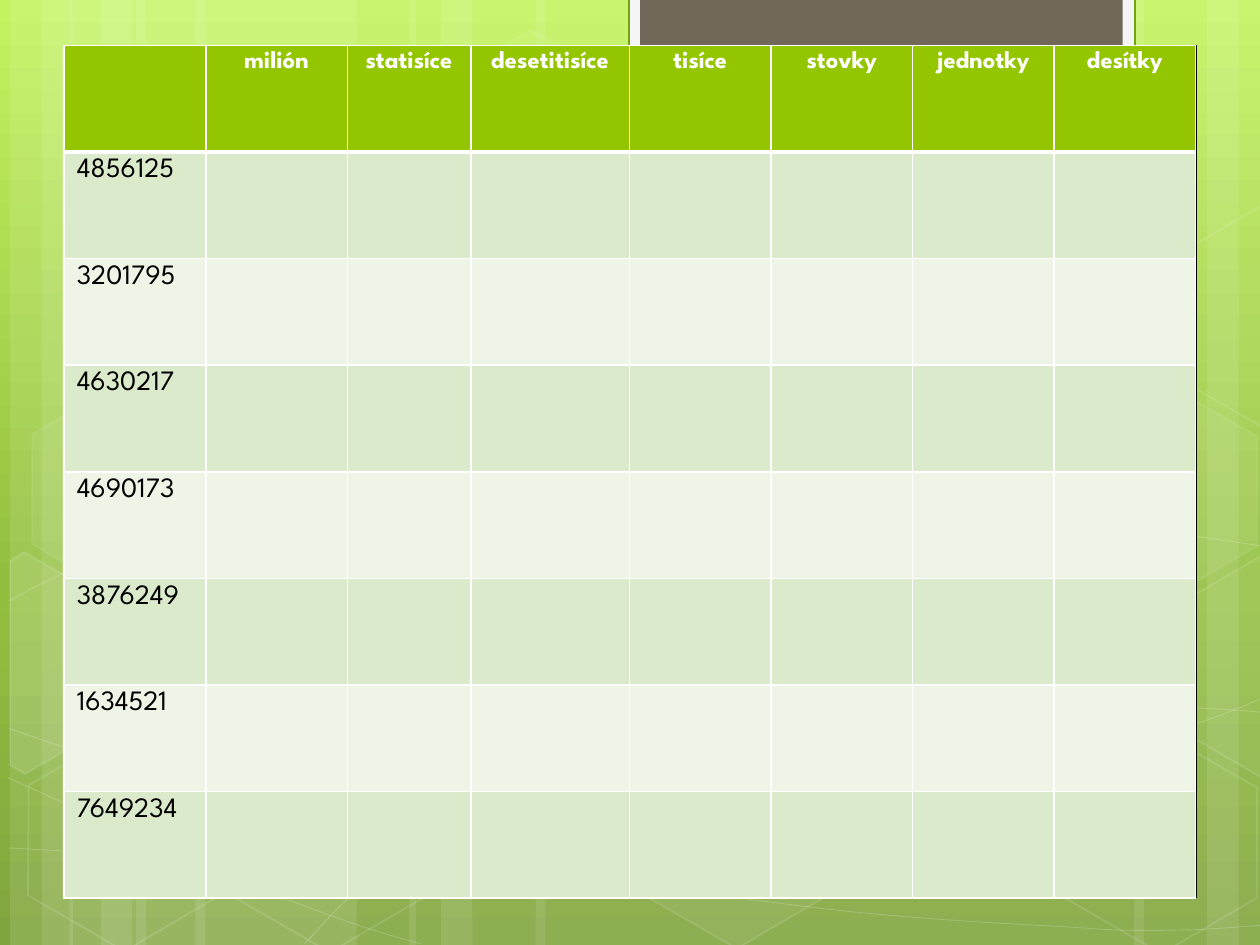
"""Build a place-value worksheet table on a green hexagon background."""
from copy import deepcopy
from math import cos, radians, sin

from lxml import etree
from pptx import Presentation
from pptx.dml.color import RGBColor
from pptx.enum.shapes import MSO_SHAPE
from pptx.enum.text import PP_ALIGN
from pptx.oxml.ns import qn
from pptx.util import Inches, Pt

RECT, HEX = MSO_SHAPE.RECTANGLE, MSO_SHAPE.HEXAGON
CENTER, LEFT = PP_ALIGN.CENTER, PP_ALIGN.LEFT
FONT = "League Spartan"
WIDE, HIGH, TILT = 10, 7.5, 30

HEADS = ["", "milión", "statisíce", "desetitisíce", "tisíce", "stovky", "jednotky", "desítky"]
NUMBERS = ["4856125", "3201795", "4630217", "4690173", "3876249", "1634521", "7649234"]

COLORS = {
    "white": "FFFFFF", "black": "000000", "head": "94C600", "odd": "DCEACC",
    "even": "EEF5E7", "tab": "F5F5F5", "edge": "74A510", "brown": "71685A",
}
SKY = [(0, "C3F35F"), (0.62, "93BF3F"), (1, "81A53E")]

BANDS = [
    (1.08, 1.75, 0), (0.08, 0.5, 0), (0.33, 0.83, 0), (1.55, 1.75, 0), (0.55, 0.5, 0), (0.8, 0.83, 0),
    (7.33, 1.75, 180), (9.58, 0.5, 180), (9, 0.83, 180), (4.25, 3.08, 0), (3.25, 0.5, 0), (3.5, 0.83, 0),
]
CURVES = [
    [(0.07, 6.73), (0.61, 6.76), (1.15, 6.79), (1.9, 6.78), (2.65, 6.77), (3.58, 6.75),
     (4.58, 6.65), (5.58, 6.55), (7, 6.36), (7.92, 6.17), (8.83, 5.98), (9.77, 5.68), (10.07, 5.51)],
    [(0.07, 4.77), (0.36, 4.61), (0.65, 4.46), (1.21, 4.31), (1.78, 4.16), (2.59, 3.94),
     (3.47, 3.87), (4.36, 3.8), (5.44, 3.79), (6.54, 3.87), (7.64, 3.95), (9.47, 4.26), (10.07, 4.34)],
    [(0.06, 6.17), (1.27, 6.72), (2.47, 7.27), (3.34, 7.49)],
    [(0.07, 5.78), (0.38, 5.89), (0.7, 6), (1.28, 6.16), (1.86, 6.31), (2.73, 6.56),
     (3.57, 6.73), (4.4, 6.9), (5.45, 7.08), (6.28, 7.18), (7.11, 7.29), (8, 7.33),
     (8.53, 7.36), (9.05, 7.4), (9.19, 7.38), (9.45, 7.38), (9.71, 7.37), (9.89, 7.35), (10.07, 7.34)],
    [(2.42, 7.49), (2.6, 7.29), (2.78, 7.09), (3.02, 6.91), (3.26, 6.73), (3.6, 6.53),
     (3.88, 6.39), (4.16, 6.25), (4.33, 6.19), (4.7, 6.09), (5.06, 5.99), (5.73, 5.85),
     (6.08, 5.78), (6.44, 5.71), (6.49, 5.71), (6.8, 5.69), (7.11, 5.66), (7.6, 5.63),
     (7.94, 5.62), (8.29, 5.61), (8.86, 5.62), (8.86, 5.62), (8.86, 5.62), (9.53, 5.62),
     (9.53, 5.62), (9.71, 5.63), (9.88, 5.64), (9.97, 5.65), (10.06, 5.66), (10.03, 5.65), (10.06, 5.66)],
]
HEXES = [
    (3.34, 0.36, 4, 8), (4.97, 5.89, 6, 12), (0.11, 5.91, 0, 12), (0.14, 3.12, 7, 8),
    (1.74, 5.92, 0, 12), (7.53, 4.53, 10, 12), (8.34, 5.93, 0, 12), (8.34, 3.14, 7, 8),
]
PARTS = [
    ((0.36, 5.35), [(0.08, 4.45), (0.19, 4.38), (0.96, 4.82), (0.95, 5.7), (0.2, 6.14), (0.08, 6.07)], 10),
    ((9.85, 5.2), [(9.26, 4.85), (10.01, 4.41), (10.09, 4.46), (10.09, 6.13), (10.02, 6.17), (9.26, 5.73)], 4),
    ((9.85, 2.41), [(9.26, 2.07), (10.01, 1.63), (10.1, 1.68), (10.09, 3.35), (10.02, 3.39), (9.26, 2.95)], 0),
]
PANELS = [
    ((0.5, 0.36, 9, 6.76), "white", "black", 0.5),
    ((4.99, -0.02, 4.02, 0.76), "tab", "edge", 0.85),
    ((5.08, -0.02, 3.83, 0.68), "brown", None, 0),
]
GRID = (0.51, 0.36, 8.98, 6.77)
SPECIAL = {2: 0.98, 3: 1.26}


def rgb(name):
    return RGBColor.from_string(COLORS[name])


def fade(shape, query, share):
    for color in shape._element.spPr.xpath(query):
        etree.SubElement(color, qn("a:alpha")).set("val", str(share * 1000))


def paint(shape, fill="white", cover=100, line=None, width=1, ink=100):
    shape.shadow.inherit = False
    if cover:
        shape.fill.solid()
        shape.fill.fore_color.rgb = rgb(fill)
        if cover < 100:
            fade(shape, "./a:solidFill/a:srgbClr", cover)
    else:
        shape.fill.background()
    if line:
        shape.line.color.rgb = rgb(line)
        shape.line.width = Pt(width)
        if ink < 100:
            fade(shape, "./a:ln//a:srgbClr", ink)
    else:
        shape.line.fill.background()


def add(shapes, kind, box):
    return shapes.add_shape(kind, *map(Inches, box))


def trace(shapes, points, close):
    first, *rest = [(Inches(x), Inches(y)) for x, y in points]
    pen = shapes.build_freeform(*first)
    pen.add_line_segments(rest, close=close)
    return pen.convert_to_shape()


def bend(shape, points):
    """Turn each three straight steps into one cubic curve, or one line if flat."""
    steps = shape._element.xpath(".//a:lnTo")
    for i in range(0, len(steps), 3):
        start, near, far, end = points[i:i + 4]
        one, two, three = steps[i:i + 3]
        if near == start and far == end:
            one.getparent().remove(one)
            two.getparent().remove(two)
            continue
        curve = etree.Element(qn("a:cubicBezTo"))
        one.addprevious(curve)
        for step in (one, two, three):
            curve.append(step[0])
            step.getparent().remove(step)


def turn(points, mid, angle):
    c, s = cos(radians(angle)), sin(radians(angle))
    moved = [(x - mid[0], y - mid[1]) for x, y in points]
    return [(mid[0] + x * c - y * s, mid[1] + x * s + y * c) for x, y in moved]


def border(cell, top, bottom):
    props = cell._tc.get_or_add_tcPr()
    for i, (side, width) in enumerate((("L", 1), ("R", 1), ("T", top), ("B", bottom))):
        line = etree.Element(qn("a:ln" + side), w=str(Pt(width)))
        fill = etree.SubElement(line, qn("a:solidFill"))
        etree.SubElement(fill, qn("a:srgbClr")).set("val", COLORS["white"])
        props.insert(i, line)


def fill_sky(slide):
    fill = slide.background.fill
    fill.gradient()
    fill.gradient_angle = 270
    first = slide._element.xpath(".//a:gs")[0]
    first.addnext(deepcopy(first))
    for stop, (place, color) in zip(fill.gradient_stops, SKY):
        stop.position = place
        stop.color.rgb = RGBColor.from_string(color)


def add_grid(shapes):
    rows = [HEADS] + [[number] + [""] * (len(HEADS) - 1) for number in NUMBERS]
    table = shapes.add_table(len(rows), len(HEADS), *map(Inches, GRID)).table
    rest = (GRID[2] - sum(SPECIAL.values())) / (len(HEADS) - len(SPECIAL))
    for i, col in enumerate(table.columns):
        col.width = Inches(SPECIAL.get(i, rest))
    for r, texts in enumerate(rows):
        table.rows[r].height = Inches(GRID[3] / len(rows))
        head = r == 0
        for c, text in enumerate(texts):
            cell = table.cell(r, c)
            cell.fill.solid()
            cell.fill.fore_color.rgb = rgb("head" if head else "odd" if r % 2 else "even")
            border(cell, 3 if r == 1 else 1, 3 if head else 1)
            para = cell.text_frame.paragraphs[0]
            para.text = text
            para.alignment = CENTER if head else LEFT
            for run in para.runs:
                run.font.name = FONT
                run.font.size = Pt(14 if head else 16)
                run.font.bold = head
                run.font.color.rgb = rgb("white" if head else "black")


def main():
    deck = Presentation()
    deck.slide_width, deck.slide_height = Inches(WIDE), Inches(HIGH)
    slide = deck.slides.add_slide(deck.slide_layouts[6])
    shapes = slide.shapes
    fill_sky(slide)
    for left, width, angle in BANDS:
        band = add(shapes, RECT, (left, 0, width, HIGH))
        band.rotation = angle
        paint(band, cover=10)
    for points in CURVES:
        curve = trace(shapes, points, False)
        bend(curve, points)
        paint(curve, cover=0, line="white", width=0.5, ink=20)
    for left, top, cover, ink in HEXES:
        cell = add(shapes, HEX, (left, top, 1.75, 1.52))
        cell.adjustments[0] = 0.285
        cell.rotation = TILT
        paint(cell, cover=cover, line="white", ink=ink)
    for mid, points, cover in PARTS:
        part = trace(shapes, turn(points + points[:1], mid, -TILT), True)
        part.rotation = TILT
        paint(part, cover=cover, line="white", ink=12)
    for box, fill, line, width in PANELS:
        paint(add(shapes, RECT, box), fill, line=line, width=width)
    add_grid(shapes)
    deck.save("out.pptx")


if __name__ == "__main__":
    main()
